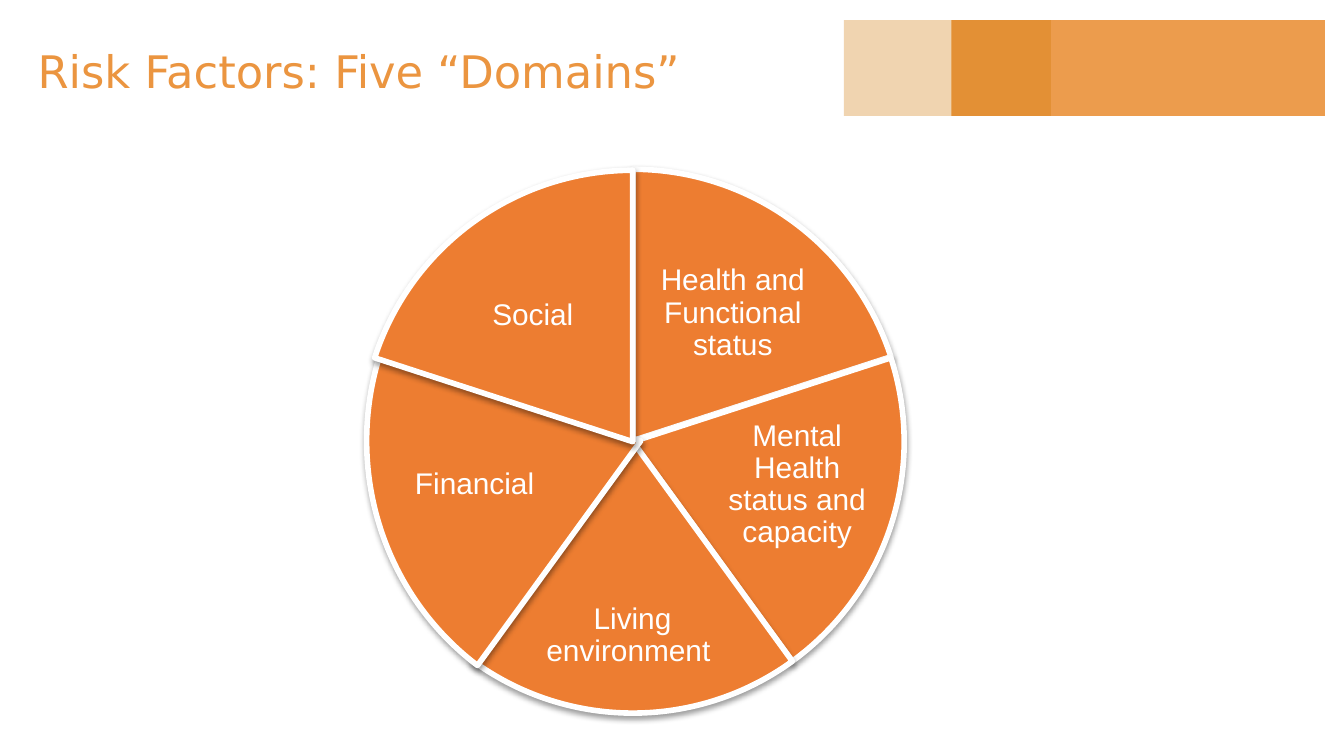
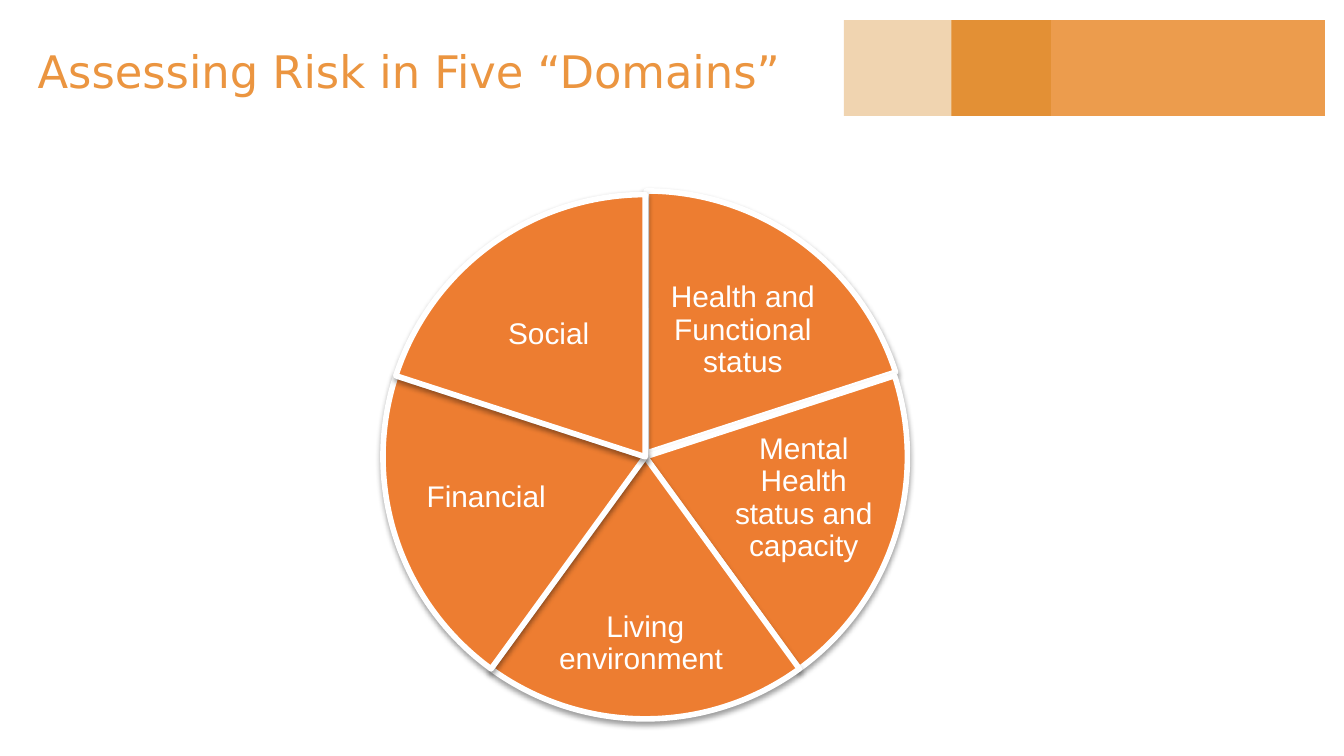
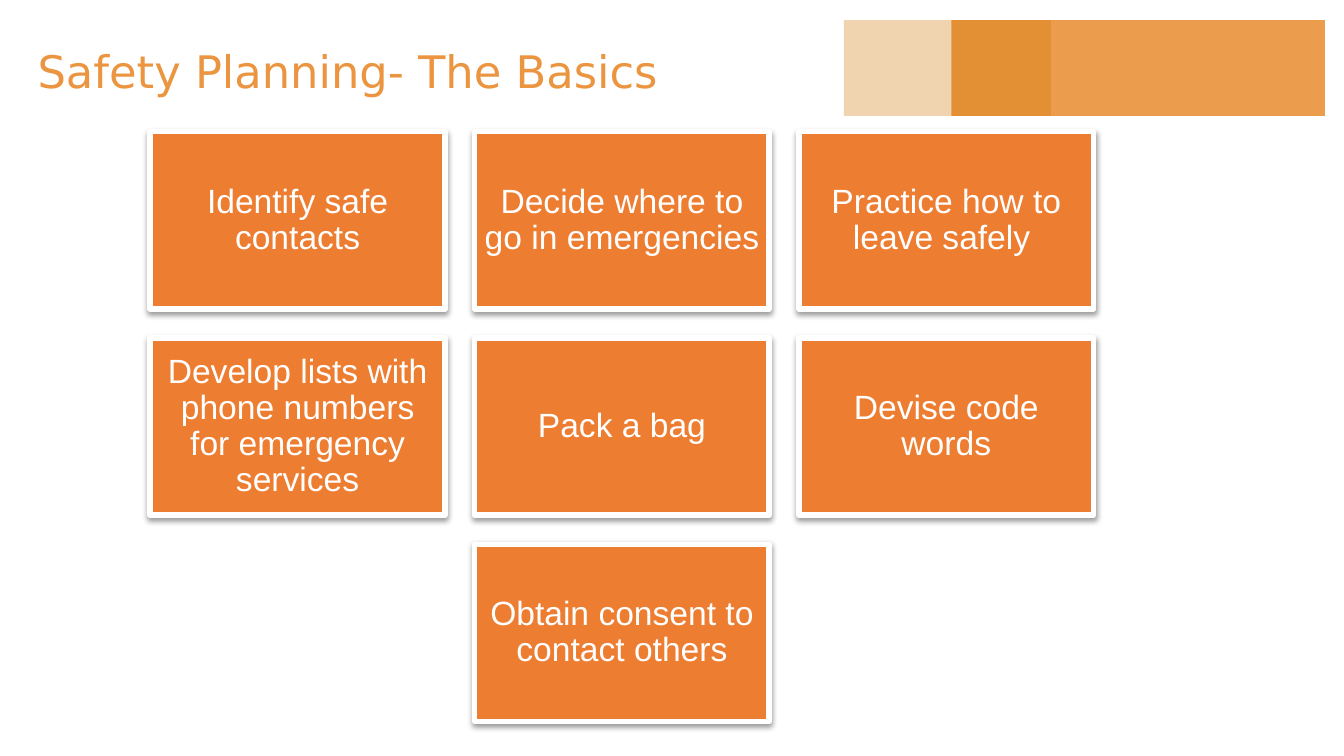
"""Build three slides on risk domains and safety planning."""
from collections import namedtuple

from lxml import etree
from pptx import Presentation
from pptx import util as u
from pptx.dml import color
from pptx.enum import shapes, text
from pptx.oxml import ns

COLORS = {
    "title": "EB9540",
    "band": "EB9540",
    "overlay": "D07700",
    "fill": "ED7D31",
    "white": "FFFFFF",
    "shadow": "000000",
}
TITLE_FONT = "DejaVu Sans"
BODY_FONT = "Arial"

Box = namedtuple("Box", "left top width height")
Domain = namedtuple("Domain", "name label")

TITLE_BOX = Box(0.46, 0.13, 22.86, 2.39)
BANDS = [
    (Box(17.98, 0.38, 7.06, 1.81), "band", 93),
    (Box(15.95, 0.38, 3.91, 1.81), "overlay", 31),
]

# Label boxes are percentages of the wedge's box.
DOMAINS = [
    Domain("Health and Functional status", Box(51.5, 14.9, 33.9, 23.3)),
    Domain("Mental Health status and capacity", Box(65.4, 45.3, 29.7, 25.2)),
    Domain("Living environment ", Box(32.2, 75, 35.6, 21.5)),
    Domain("Financial", Box(4.8, 45.3, 29.7, 25.2)),
    Domain("Social", Box(14.6, 15.1, 33.9, 23.3)),
]

SAFETY_STEPS = [
    ["Identify safe contacts", "Decide where to go in emergencies",
     "Practice how to leave safely "],
    ["Develop lists with phone numbers for emergency services", "Pack a bag",
     "Devise code words"],
    ["Obtain consent to contact others"],
]


def rgb(name):
    """Return the named colour."""
    return color.RGBColor.from_string(COLORS[name])


def lengths(box):
    """Return the sides of a box as lengths."""
    return [u.Cm(round(side, 2)) for side in box]


def add_filled(parent, kind, box, fill):
    """Add a preset shape with a plain fill and no shadow."""
    shape = parent.add_shape(kind, *lengths(box))
    shape.shadow.inherit = False
    shape.fill.solid()
    shape.fill.fore_color.rgb = rgb(fill)
    return shape


def add_tile(parent, kind, box):
    """Add an orange shape with a white outline and a soft shadow."""
    shape = add_filled(parent, kind, box, "fill")
    shape.line.color.rgb = rgb("white")
    shape.line.width = u.Pt(3)
    effects = shape.element.spPr.find(ns.qn("a:effectLst"))
    shadow = etree.SubElement(
        effects, ns.qn("a:outerShdw"), blurRad=str(u.Pt(3.1)),
        dist=str(u.Pt(1.6)), dir="5400000", rotWithShape="0")
    tint = etree.SubElement(shadow, ns.qn("a:srgbClr"), val=COLORS["shadow"])
    etree.SubElement(tint, ns.qn("a:alpha"), val="38000")
    return shape


def set_margins(frame, margin):
    """Wrap the text, centre it vertically and use equal margins."""
    frame.word_wrap = True
    frame.auto_size = text.MSO_AUTO_SIZE.NONE
    frame.vertical_anchor = text.MSO_ANCHOR.MIDDLE
    frame.margin_left = frame.margin_right = u.Cm(margin)
    frame.margin_top = frame.margin_bottom = u.Cm(margin)


def add_run(paragraph, words, font, size, fill):
    """Add one formatted run."""
    run = paragraph.add_run()
    run.text = words
    run.font.name = font
    run.font.size = u.Pt(size)
    run.font.color.rgb = rgb(fill)


def write_label(shape, words, size, margin):
    """Write a centred white label."""
    set_margins(shape.text_frame, margin)
    paragraph = shape.text_frame.paragraphs[0]
    paragraph.alignment = text.PP_ALIGN.CENTER
    paragraph.line_spacing = 0.9
    add_run(paragraph, words, BODY_FONT, size, "white")


def add_bands(slide):
    """Put the translucent header bands on the slide's master."""
    master_tree = slide.slide_layout.slide_master.shapes.element
    for position, (box, fill, opacity) in enumerate(BANDS, start=2):
        band = add_filled(slide.shapes, shapes.MSO_SHAPE.RECTANGLE, box, fill)
        band.line.fill.background()
        tint = band.element.spPr.find(".//" + ns.qn("a:srgbClr"))
        etree.SubElement(tint, ns.qn("a:alpha"), val=str(opacity * 1000))
        master_tree.insert(position, band.element)


def add_titled_slide(presentation, words):
    """Add a slide with its title."""
    slide = presentation.slides.add_slide(presentation.slide_layouts[5])
    title = slide.shapes.title
    title.left, title.top, title.width, title.height = lengths(TITLE_BOX)
    set_margins(title.text_frame, 0.25)
    paragraph = title.text_frame.paragraphs[0]
    paragraph.alignment = text.PP_ALIGN.LEFT
    add_run(paragraph, words, TITLE_FONT, 24, "title")
    return slide


def add_domain_wheel(slide, circle, moved):
    """Draw equal wedges clockwise from the top, some in boxes of their own."""
    wheel = slide.shapes.add_group_shape().shapes
    sweep = 360 / len(DOMAINS)
    for index, domain in enumerate(DOMAINS):
        box = moved.get(domain.name, circle)
        wedge = add_tile(wheel, shapes.MSO_SHAPE.PIE, box)
        for side in range(2):
            angle = (270 + (index + side) * sweep) % 360
            wedge.adjustments[side] = angle * 0.6
        share = domain.label
        label_box = Box(box.left + box.width * share.left / 100,
                        box.top + box.height * share.top / 100,
                        box.width * share.width / 100,
                        box.height * share.height / 100)
        label = wheel.add_textbox(*lengths(label_box))
        write_label(label, domain.name, 16, 0.05)


def add_step_cards(slide, first, step_x, step_y):
    """Lay out the safety steps in rows, centring the short ones."""
    cards = slide.shapes.add_group_shape().shapes
    columns = max(len(row) for row in SAFETY_STEPS)
    for row_index, row in enumerate(SAFETY_STEPS):
        indent = (columns - len(row)) / 2
        for column, words in enumerate(row):
            box = first._replace(left=first.left + (column + indent) * step_x,
                                 top=first.top + row_index * step_y)
            card = add_tile(cards, shapes.MSO_SHAPE.RECTANGLE, box)
            write_label(card, words, 18, 0.17)


def main():
    """Build and save the presentation."""
    presentation = Presentation()
    presentation.slide_width = u.Cm(25.4)
    presentation.slide_height = u.Cm(14.29)

    slide = add_titled_slide(presentation, "Risk Factors: Five “Domains”")
    add_bands(slide)
    add_domain_wheel(slide, Box(6.83, 3.22, 10.26, 10.26), {
        "Health and Functional status": Box(6.83, 3.2, 10.26, 10.26),
        "Financial": Box(6.93, 3.05, 10.36, 10.57),
    })

    slide = add_titled_slide(presentation, "Assessing Risk in Five “Domains”")
    add_domain_wheel(slide, Box(7.24, 3.68, 9.91, 9.91), {
        "Health and Functional status": Box(7.26, 3.61, 9.91, 9.91),
    })

    slide = add_titled_slide(presentation, "Safety Planning- The Basics")
    add_step_cards(slide, Box(2.84, 2.49, 5.57, 3.35), 6.13, 3.9)

    presentation.save("out.pptx")


if __name__ == "__main__":
    main()
